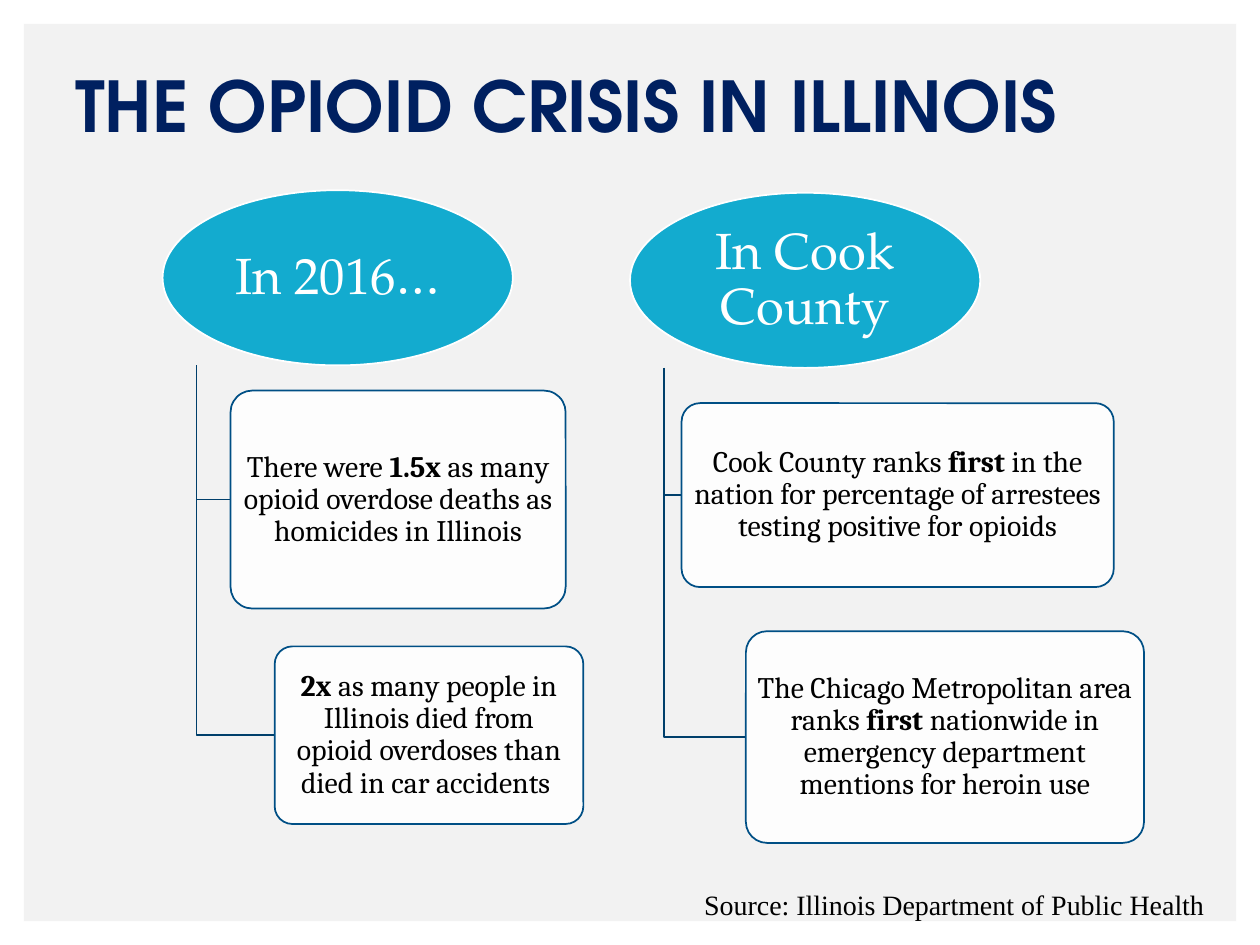
"""Build the slide on the opioid crisis in Illinois."""
from lxml.etree import SubElement
from pptx import Presentation
from pptx.dml.color import RGBColor
from pptx.enum.shapes import MSO_SHAPE
from pptx.enum.text import MSO_ANCHOR, MSO_AUTO_SIZE, PP_ALIGN
from pptx.oxml.ns import qn
from pptx.util import Inches, Pt


def rgb(value):
    return RGBColor.from_string(value)


def write(sp, runs, font, size, color, align, margins=(0.1, 0.05), spacing=0.9):
    tf = sp.text_frame
    mx, my = map(Inches, margins)
    frame = {"word_wrap": True, "auto_size": MSO_AUTO_SIZE.NONE,
             "vertical_anchor": MSO_ANCHOR.MIDDLE,
             "margin_left": mx, "margin_right": mx,
             "margin_top": my, "margin_bottom": my}
    for name, value in frame.items():
        setattr(tf, name, value)
    p = tf.paragraphs[0]
    p.alignment, p.line_spacing = align, spacing
    for text, bold in runs:
        r = p.add_run()
        r.text = text
        for name, value in {"name": font, "size": Pt(size), "bold": bold}.items():
            setattr(r.font, name, value)
        r.font.color.rgb = rgb(color)


prs = Presentation()
prs.slide_width, prs.slide_height = Inches(10), Inches(7.5)
s = prs.slides.add_slide(prs.slide_layouts[5])

panel = s.shapes.add_shape(MSO_SHAPE.RECTANGLE, *map(Inches, (0.19, 0.19, 9.62, 7.12)))
panel.shadow.inherit = False
panel.fill.solid()
panel.fill.fore_color.rgb = rgb("F2F2F2")
panel.line.fill.background()

title = s.shapes.title
s.shapes._spTree.remove(title._element)
s.shapes._spTree.append(title._element)
title.left, title.top, title.width, title.height = map(Inches, (0.5, 0, 9, 1.75))
write(title, [("THE OPIOID CRISIS IN ILLINOIS", True)],
      "TeX Gyre Adventor", 40, "002060", PP_ALIGN.LEFT)

columns = [
    ("In 2016…", 1.29, 1.51, [
        ((1.83, 3.1, 2.66, 1.73),
         [("There were ", False), ("1.5x", True),
          (" as many opioid overdose deaths as homicides in Illinois", False)]),
        ((2.18, 5.13, 2.45, 1.41),
         [("2x", True),
          (" as many people in Illinois died from opioid overdoses than "
           "died in car accidents ", False)])]),
    ("In Cook County", 5, 1.53, [
        ((5.41, 3.2, 3.43, 1.46),
         [("Cook County ranks ", False), ("first", True),
          (" in the nation for percentage of arrestees testing positive "
           "for opioids", False)]),
        ((5.92, 5.01, 3.16, 1.68),
         [("The Chicago Metropolitan area ranks ", False), ("first ", True),
          ("nationwide in emergency department mentions for heroin use", False)])]),
]

for heading, left, top, facts in columns:
    oval = s.shapes.add_shape(MSO_SHAPE.OVAL, *map(Inches, (left, top, 2.78, 1.39)))
    oval.shadow.inherit = False
    oval.fill.solid()
    oval.fill.fore_color.rgb = rgb("13ABCF")
    oval.line.color.rgb = rgb("FFFFFF")
    oval.line.width = Pt(1)
    write(oval, [(heading, False)], "TeX Gyre Pagella", 29, "FFFFFF",
          PP_ALIGN.CENTER, (0.06, 0.04))
    stem_x, stem_y = Inches(left + 0.27), Inches(top + 1.39)

    for (x, y, w, h), runs in facts:
        middle = Inches(y + h / 2)
        fb = s.shapes.build_freeform(stem_x, stem_y)
        fb.add_line_segments([(stem_x, middle), (Inches(x), middle)], close=False)
        branch = fb.convert_to_shape()
        branch.shadow.inherit = False
        branch.fill.background()
        branch.line.color.rgb = rgb("003F6B")
        branch.line.width = Pt(1)

        box = s.shapes.add_shape(MSO_SHAPE.ROUNDED_RECTANGLE, *map(Inches, (x, y, w, h)))
        box.adjustments[0] = 0.1
        box.shadow.inherit = False
        box.fill.solid()
        box.fill.fore_color.rgb = rgb("FFFFFF")
        white = box._element.spPr.find(qn("a:solidFill")).find(qn("a:srgbClr"))
        SubElement(white, qn("a:alpha"), val="90000")
        box.line.color.rgb = rgb("004F85")
        box.line.width = Pt(1)
        write(box, runs, "Cambria", 17, "000000", PP_ALIGN.CENTER, (0.04, 0.02))

source = s.shapes.add_textbox(*map(Inches, (5.49, 6.99, 4.25, 0.37)))
write(source, [("Source: Illinois Department of Public Health", False)],
      "Times New Roman", 16, "000000", PP_ALIGN.LEFT, spacing=1.0)

prs.save("out.pptx")
